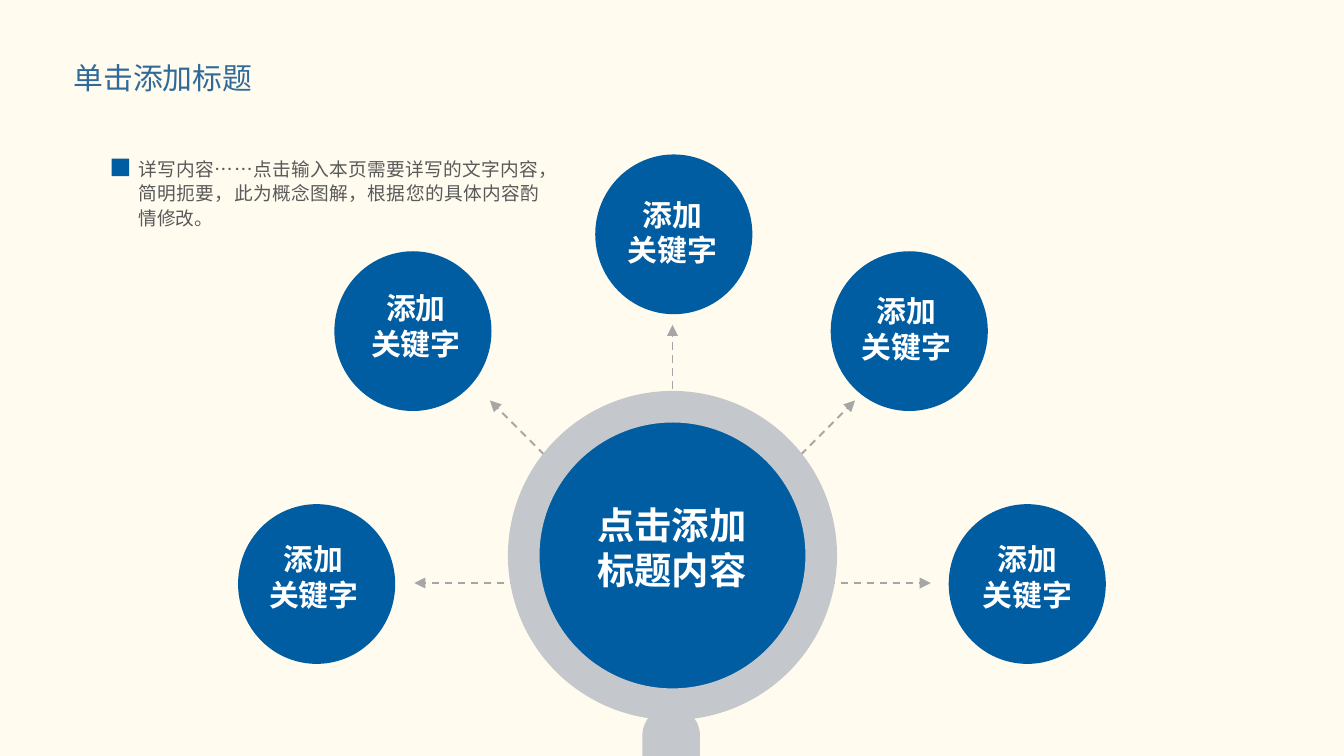
import math

from lxml import etree
from pptx import Presentation
from pptx import util as u
from pptx.dml.color import RGBColor
from pptx.enum import dml, shapes, text
from pptx.oxml.ns import qn

COLORS = {
    "background": "FFFBEF",
    "blue": "005DA2",
    "title": "306A9B",
    "gray": "C4C7CB",
    "arrow": "A6A6A6",
    "body": "595959",
    "white": "FFFFFF",
}
SHAPE = shapes.MSO_SHAPE
ALIGN = text.PP_ALIGN


class Slide:
    """Holds the style and the current slide; all lengths are in cm."""

    font = "Noto Sans CJK SC"

    def __init__(self, prs):
        self.s = prs.slides.add_slide(prs.slide_layouts[6])
        self.paint(self.s.background.fill, "background")

    def paint(self, fill, color):
        fill.solid()
        fill.fore_color.rgb = RGBColor.from_string(COLORS[color])

    def shape(self, kind, x, y, w, h, color, adj=None):
        sp = self.s.shapes.add_shape(kind, u.Cm(x), u.Cm(y), u.Cm(w), u.Cm(h))
        sp.shadow.inherit = False
        self.paint(sp.fill, color)
        sp.line.fill.background()
        if adj is not None:
            sp.adjustments[0] = adj

    def text(self, lines, x, y, w, h, size, color, bold=False,
             align=ALIGN.LEFT, inset=(0.25, 0.13), spacing=None):
        sp = self.s.shapes.add_textbox(u.Cm(x), u.Cm(y), u.Cm(w), u.Cm(h))
        tf = sp.text_frame
        tf.word_wrap = True
        tf.auto_size = text.MSO_AUTO_SIZE.SHAPE_TO_FIT_TEXT
        tf.margin_left = tf.margin_right = u.Cm(inset[0])
        tf.margin_top = tf.margin_bottom = u.Cm(inset[1])
        tf.text = "\n".join(lines)
        for p in tf.paragraphs:
            p.alignment = align
            if spacing:
                p.line_spacing = u.Pt(spacing)
            p.font.size = u.Pt(size)
            p.font.bold = bold
            p.font.color.rgb = RGBColor.from_string(COLORS[color])
            p.font.name = self.font
            props = p._p.pPr.find(qn("a:defRPr"))
            etree.SubElement(props, qn("a:ea"), typeface=self.font)

    def arrow(self, x, y, length, degrees):
        """Draw a dashed arrow from (x, y), counted anticlockwise from the right."""
        angle = math.radians(degrees)
        line = self.s.shapes.add_connector(
            shapes.MSO_CONNECTOR.STRAIGHT, u.Cm(x), u.Cm(y),
            u.Cm(x + length * math.cos(angle)),
            u.Cm(y - length * math.sin(angle)))
        line.line.color.rgb = RGBColor.from_string(COLORS["arrow"])
        line.line.width = u.Pt(1)
        line.line.dash_style = dml.MSO_LINE.DASH
        etree.SubElement(line.line._ln, qn("a:tailEnd"), type="triangle")
        etree.SubElement(line._element.spPr, qn("a:effectLst"))


def main():
    prs = Presentation()
    prs.slide_width, prs.slide_height = u.Cm(25.4), u.Cm(14.29)
    s = Slide(prs)

    s.text(["单击添加标题"], 1.14, 0.99, 4.9, 0.94, 16, "title")

    for degrees in range(0, 181, 45):
        s.arrow(12.71, 11.02, 4.88, degrees)

    # Magnifying glass
    s.shape(SHAPE.OVAL, 10.08, 7.9, 5.21, 5.21, "blue")
    s.shape(SHAPE.DONUT, 9.6, 7.39, 6.22, 6.22, "gray", 0.096)
    s.shape(SHAPE.ROUNDED_RECTANGLE, 12.14, 13.36, 1.09, 2.24, "gray", 0.5)
    s.text(["点击添加", "标题内容"], 10.67, 9.37, 4.06, 1.96, 20, "white",
           bold=True, align=ALIGN.CENTER)

    # Keyword circles: circle corner, then label corner
    keywords = [
        (4.5, 9.53, 4.7, 10.08),
        (6.32, 4.75, 6.63, 5.33),
        (11.25, 2.92, 11.48, 3.56),
        (15.7, 4.75, 15.9, 5.38),
        (17.93, 9.53, 18.19, 10.08),
    ]
    for x, y, label_x, label_y in keywords:
        s.shape(SHAPE.OVAL, x, y, 2.97, 3.02, "blue")
        s.text(["添加", "关键字"], label_x, label_y, 2.46, 1.68, 16, "white",
               bold=True, align=ALIGN.CENTER, inset=(0.3, 0.15))

    s.text(["详写内容……点击输入本页需要详写的文字内容，简明扼要，"
            "此为概念图解，根据您的具体内容酌情修改。"],
           2.62, 2.95, 7.57, 1.4, 10, "body",
           align=ALIGN.JUSTIFY, inset=(0, 0), spacing=13)
    s.shape(SHAPE.RECTANGLE, 2.11, 3, 0.33, 0.33, "blue")

    prs.save("out.pptx")


if __name__ == "__main__":
    main()
